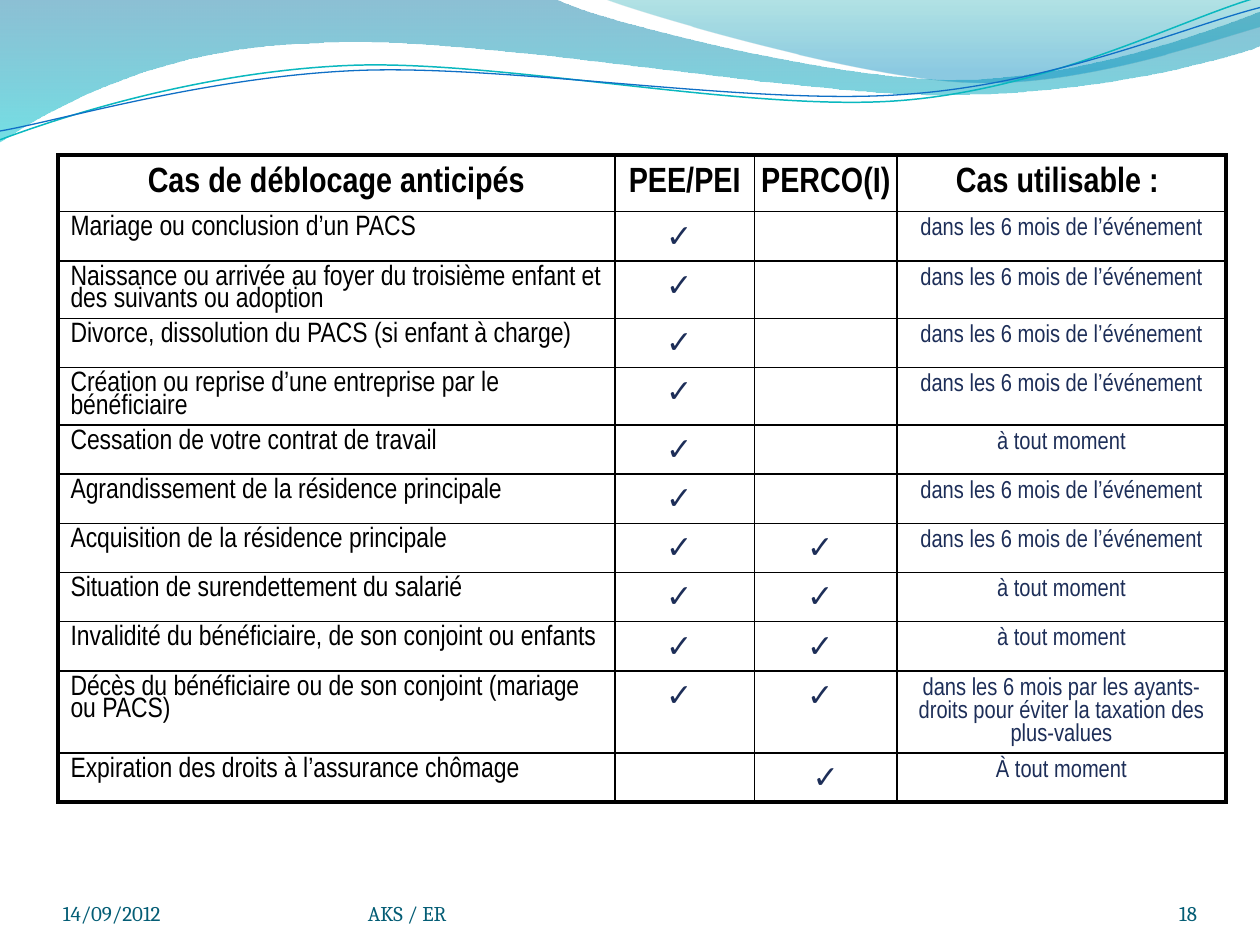
from dataclasses import dataclass

from lxml.etree import SubElement
from pptx import Presentation
from pptx.dml.color import RGBColor
from pptx.enum.text import MSO_ANCHOR, PP_ALIGN
from pptx.oxml.ns import qn
from pptx.util import Inches, Pt


@dataclass(frozen=True)
class Theme:
    black: str = "000000"
    white: str = "FFFFFF"
    navy: str = "1D2E58"
    footer: str = "045D75"
    table_font: str = "Arial Narrow"
    mark_font: str = "DejaVu Sans"
    footer_font: str = "Cambria"
    header_size: int = 20
    label_size: int = 16
    mark_size: int = 18
    when_size: int = 14
    footer_size: int = 12
    thin: float = 1
    thick: float = 2.25


T = Theme()

# Waves: start point, then lines (one point) or Bézier curves (three points)
FILLED_WAVES = [
    ([(0, 0), [(4.4, -0.01)],
      [(4.76, 0.17), (6.64, 0.63), (7.58, 0.63)],
      [(8.53, 0.63), (9.58, 0.26), (10, 0.09)], [(10.01, 0.36)],
      [(9.83, 0.44), (8.7, 0.76), (7.46, 0.75)],
      [(6.22, 0.75), (3.82, 0.28), (2.57, 0.34)],
      [(1.29, 0.36), (0.46, 0.83), (-0.01, 1.13)], [(0, 0)]],
     [(0, "0074A1", 45), (1, "00C6CF", 55)]),
    ([(4.79, -0.01), [(5.09, 0.11), (6.82, 0.62), (7.69, 0.65)],
      [(8.56, 0.69), (9.61, 0.32), (10, 0.21)], [(10, 0)], [(4.79, -0.01)]],
     [(0, "00A1A9", 30), (0.8, "008BBF", 45)]),
]
LINE_WAVES = [
    ([(0, 1.11), [(0.48, 0.93), (1.58, 0.57), (2.77, 0.52)],
      [(3.95, 0.47), (5.93, 0.89), (7.13, 0.8)],
      [(8.33, 0.71), (9.38, 0.15), (9.98, -0.02)]], "0AB8BF", 0.85),
    ([(0, 1.04), [(0.47, 0.96), (1.64, 0.61), (2.83, 0.56)],
      [(4.03, 0.51), (5.97, 0.84), (7.17, 0.75)],
      [(8.36, 0.67), (9.41, 0.21), (10, 0.06)]], "0F6FC6", 0.75),
]

EVENT = "dans les 6 mois de l’événement"
ANYTIME = "à tout moment"
MARK = "✓ "
HEADERS = ["Cas de déblocage anticipés", "PEE/PEI", "PERCO(I)", "Cas utilisable : "]
CASES = [
    ("Mariage ou conclusion d’un PACS", MARK, "", EVENT),
    ("Naissance ou arrivée au foyer du troisième enfant et des suivants ou adoption",
     MARK, "", EVENT),
    ("Divorce, dissolution du PACS (si enfant à charge)", MARK, "", EVENT),
    ("Création ou reprise d’une entreprise par le bénéficiaire", MARK, "", EVENT),
    ("Cessation de votre contrat de travail", MARK, "", ANYTIME),
    ("Agrandissement de la résidence principale", MARK, "", EVENT),
    ("Acquisition de la résidence principale", MARK, MARK, EVENT),
    ("Situation de surendettement du salarié", MARK, MARK, ANYTIME),
    ("Invalidité du bénéficiaire, de son conjoint ou enfants", MARK, MARK, ANYTIME),
    ("Décès du bénéficiaire ou de son conjoint (mariage ou PACS)", MARK, MARK,
     "dans les 6 mois par les ayants-droits pour éviter la taxation des plus-values"),
    ("Expiration des droits à l’assurance chômage", "", "✓", "À tout moment"),
]
COL_WIDTHS = [4.42, 1.11, 1.13, 2.61]
ROW_HEIGHTS = [0.45, 0.37, 0.41] + [0.37] * 9


def rgb(value):
    return RGBColor.from_string(value)


def add_run(p, text, font, size, color, bold=False):
    r = p.add_run()
    r.text = text
    r.font.name, r.font.size, r.font.bold = font, Pt(size), bold
    r.font.color.rgb = rgb(color)


def add_wave(s, left, top, wave, closed):
    start, *segments = wave
    points = [(Inches(left + x), Inches(top + y))
              for x, y in [start, *(pt for seg in segments for pt in seg)]]
    builder = s.shapes.build_freeform(*points[0])
    builder.add_line_segments(points[1:], close=closed)
    sp = builder.convert_to_shape()
    sp.shadow.inherit = False
    # Join each run of three line steps that belongs to a curve
    steps = iter(list(sp._element.spPr.iter(qn("a:lnTo"))))
    for seg in segments:
        first, *others = [next(steps) for _ in seg]
        if others:
            first.tag = qn("a:cubicBezTo")
            for step in others:
                first.append(step[0])
                step.getparent().remove(step)
    return sp


def add_waves(s, left, top):
    for wave, stops in FILLED_WAVES:
        sp = add_wave(s, left, top, wave, True)
        sp.line.fill.background()
        sp.fill.gradient()
        sp.fill.gradient_angle = 270  # top to bottom
        for stop, (position, color, _) in zip(sp.fill.gradient_stops, stops):
            stop.position, stop.color.rgb = position, rgb(color)
        colors = sp._element.spPr.iter(qn("a:srgbClr"))
        for clr, (_, _, opacity) in zip(list(colors), stops):
            SubElement(clr, qn("a:alpha"), val=str(opacity * 1000))
    for wave, color, width in LINE_WAVES:
        sp = add_wave(s, left, top, wave, False)
        sp.fill.background()
        sp.line.color.rgb, sp.line.width = rgb(color), Pt(width)


def set_borders(cell, thick_sides):
    tcPr = cell._tc.get_or_add_tcPr()
    for side in "LRTB":
        width = T.thick if side in thick_sides else T.thin
        ln = SubElement(tcPr, qn(f"a:ln{side}"), w=str(Pt(width)))
        SubElement(SubElement(ln, qn("a:solidFill")), qn("a:srgbClr"), val=T.black)


def set_space_before(p, percent):
    before = SubElement(p._p.get_or_add_pPr(), qn("a:spcBef"))
    SubElement(before, qn("a:spcPct"), val=str(percent * 1000))


def fill_cell(cell, text, row, col):
    last_row, last_col = len(CASES), len(HEADERS) - 1
    edges = {"L": col == 0, "R": col == last_col, "T": row == 0, "B": row == last_row}
    set_borders(cell, [side for side, outer in edges.items() if outer])
    if col == 2:
        cell.margin_left = cell.margin_right = Inches(0.04)
    if row == 0:
        cell.fill.solid()
        cell.fill.fore_color.rgb = rgb(T.white)
        cell.vertical_anchor = MSO_ANCHOR.MIDDLE
        style = (T.table_font, T.header_size, T.black, True)
    else:
        cell.fill.background()
        mark = (T.mark_font, T.mark_size, T.navy, True)
        style = [(T.table_font, T.label_size, T.black), mark, mark,
                 (T.table_font, T.when_size, T.navy)][col]
    p = cell.text_frame.paragraphs[0]
    if not text:  # keeps an empty cell from stretching its row
        SubElement(p._p, qn("a:endParaRPr"), sz=str(T.when_size * 100))
        return
    is_label = row > 0 and col == 0
    if is_label:
        p.line_spacing = 0.85
    else:
        p.alignment = PP_ALIGN.CENTER
    set_space_before(p, 45 if is_label and row < last_row else 80)
    add_run(p, text, *style)


def add_case_table(s, left, top):
    rows = [HEADERS, *CASES]
    table = s.shapes.add_table(len(rows), len(HEADERS), Inches(left), Inches(top),
                               Inches(sum(COL_WIDTHS)), Inches(sum(ROW_HEIGHTS))).table
    table.first_row = table.horz_banding = False
    for column, width in zip(table.columns, COL_WIDTHS):
        column.width = Inches(width)
    for i, texts in enumerate(rows):
        table.rows[i].height = Inches(ROW_HEIGHTS[i])
        for j, text in enumerate(texts):
            fill_cell(table.cell(i, j), text, i, j)


def add_footer(s, left, top, height):
    for x, width, text, align in [(0, 2.33, "14/09/2012", PP_ALIGN.LEFT),
                                  (2.42, 3.67, "AKS / ER", PP_ALIGN.LEFT),
                                  (8.17, 0.83, "18", PP_ALIGN.RIGHT)]:
        tf = s.shapes.add_textbox(Inches(left + x), Inches(top),
                                  Inches(width), Inches(height)).text_frame
        tf.word_wrap, tf.vertical_anchor = True, MSO_ANCHOR.BOTTOM
        tf.margin_left = tf.margin_right = tf.margin_top = tf.margin_bottom = 0
        p = tf.paragraphs[0]
        p.alignment = align
        add_run(p, text, T.footer_font, T.footer_size, T.footer)


def main():
    prs = Presentation()
    prs.slide_width, prs.slide_height = Inches(10), Inches(7.5)
    s = prs.slides.add_slide(prs.slide_layouts[6])
    add_waves(s, 0, 0)
    add_case_table(s, 0.46, 1.23)
    add_footer(s, 0.5, 6.95, 0.4)
    prs.save("out.pptx")


if __name__ == "__main__":
    main()
